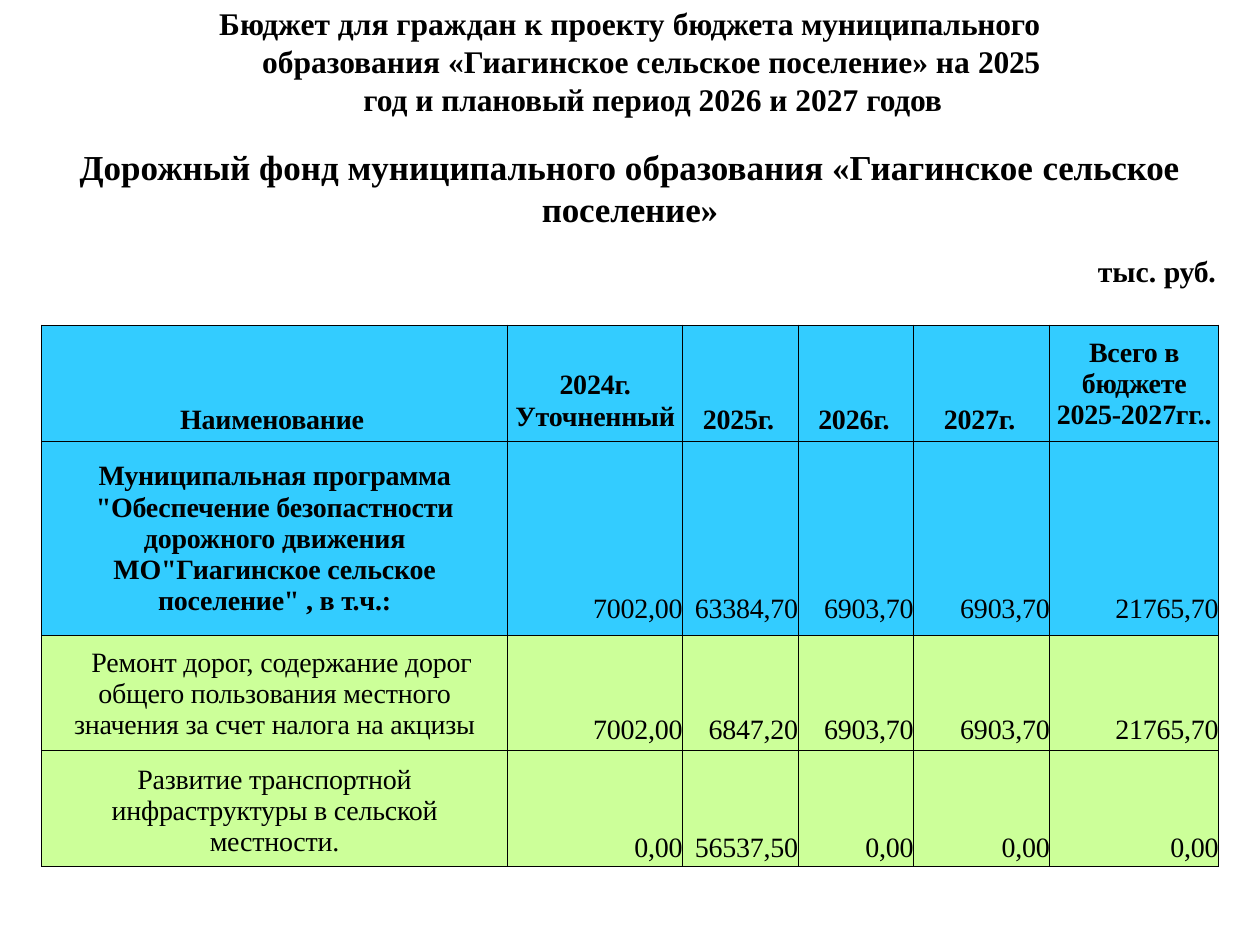
import pptx
import pptx.util
import pptx.dml.color
import pptx.enum.text
import pptx.oxml
import pptx.oxml.ns

Pt = pptx.util.Pt
Align = pptx.enum.text.PP_ALIGN
Anchor = pptx.enum.text.MSO_ANCHOR
theme = {
    "font": "Times New Roman",
    "ink": "000000",
    "blue": "33CCFF",
    "green": "CCFF99",
    "title": 18,
    "heading": 20,
    "unit": 17,
    "cell": 16,
}


def write(para, spans, size, bold, left=0, indent=0, **layout):
    props = para._p.get_or_add_pPr()
    props.set("marL", str(Pt(left)))
    props.set("indent", str(Pt(indent)))
    for name, value in layout.items():
        setattr(para, name, value)
    for text, spacing in spans:
        span = para.add_run()
        span.text = text
        for name, value in {"name": theme["font"], "size": Pt(size), "bold": bold}.items():
            setattr(span.font, name, value)
        span.font.color.rgb = pptx.dml.color.RGBColor.from_string(theme["ink"])
        span._r.get_or_add_rPr().set("spc", str(spacing))


def outline(cell):
    props = cell._tc.get_or_add_tcPr()
    for place, side in enumerate(("lnL", "lnR", "lnT", "lnB")):
        props.insert(place, pptx.oxml.parse_xml(
            f'<a:{side} {pptx.oxml.ns.nsdecls("a")} w="6350"><a:solidFill>'
            f'<a:srgbClr val="{theme["ink"]}"/></a:solidFill></a:{side}>'))


deck = pptx.Presentation()
deck.slide_width, deck.slide_height = Pt(720), Pt(540)
page = deck.slides.add_slide(deck.slide_layouts[5])

title = page.shapes.title
for name, value in {"left": 123.84, "top": 1.44, "width": 473.04, "height": 45.36}.items():
    setattr(title, name, Pt(value))
box = page.shapes.add_textbox(Pt(44.64), Pt(44.64), Pt(650.16), Pt(120.96))
frame_format = {
    "margin_left": 0, "margin_top": Pt(1), "margin_right": 0, "margin_bottom": 0,
    "word_wrap": True, "vertical_anchor": Anchor.TOP,
    "auto_size": pptx.enum.text.MSO_AUTO_SIZE.NONE,
}
for shape in (title, box):
    for name, value in frame_format.items():
        setattr(shape.text_frame, name, value)

write(title.text_frame.paragraphs[0],
      [("Бюджет для граждан к проекту ", 0), ("бюджета муниципального ", -10),
       ("образования «Гиагинское сельское поселение» на ", 0), ("2025", -20)],
      theme["title"], True, 25.9, -24.5, alignment=Align.LEFT, line_spacing=Pt(21.7))

frame = box.text_frame
write(frame.paragraphs[0],
      [("год и ", 0), ("плановый ", -10), ("период 2026 и 2027 ", 0), ("годов", -10)],
      theme["title"], True, 6.5, alignment=Align.CENTER, line_spacing=Pt(21.7))
write(frame.add_paragraph(),
      [("Дорожный фонд муниципального образования «Гиагинское ", 0),
       ("сельское поселение»", -10)],
      theme["heading"], True, 265, -264.2, alignment=Align.LEFT,
      line_spacing=Pt(24), space_before=Pt(15.6))
write(frame.add_paragraph(), [("тыс. ", 0), ("руб.", -20)], theme["unit"], True,
      alignment=Align.RIGHT, line_spacing=Pt(20.5), space_before=Pt(13.4))

columns = [266.4, 100, 66, 66, 77.8, 96.5]
rows = [66.2, 110.9, 66.2, 66.2]
header = ["Наименование", "2024г.\nУточненный", "2025г.", "2026г.", "2027г.",
          "Всего в бюджете 2025-2027гг.."]
header_insets = [79.2, 0, 11.5, 11.5, 17.3, 2]
names = [
    ('Муниципальная программа "Обеспечение безопастности дорожного движения '
     'МО"Гиагинское сельское поселение" , в т.ч.:', 28, 11.5, 0),
    ("Ремонт дорог, содержание дорог общего пользования местного "
     "значения за счет налога на акцизы", 15, 7, 8),
    ("Развитие транспортной\nинфраструктуры в сельской местности.", 37, 7.8, 0),
]
values = [
    ["7002,00", "63384,70", "6903,70", "6903,70", "21765,70"],
    ["7002,00", "6847,20", "6903,70", "6903,70", "21765,70"],
    ["0,00", "56537,50", "0,00", "0,00", "0,00"],
]
fills = [theme["blue"], theme["blue"], theme["green"], theme["green"]]
bottoms = [3, 5.7, 3, 2]

table = page.shapes.add_table(len(rows), len(columns), Pt(23.76), Pt(185.76),
                              Pt(sum(columns)), Pt(sum(rows))).table
for column, width in zip(table.columns, columns):
    column.width = Pt(width)
for row, height in zip(table.rows, rows):
    row.height = Pt(height)

for r in range(len(rows)):
    for c in range(len(columns)):
        cell = table.cell(r, c)
        left = right = top = indent = 0
        bottom, anchor, align = bottoms[r], Anchor.BOTTOM, Align.RIGHT
        if r == 0:
            text, left = header[c], header_insets[c]
            align = Align.CENTER if c in (1, 5) else Align.LEFT
            if c == 1:
                bottom = 5
            if c == 5:
                top, bottom, right, anchor = 7.2, 0, left, Anchor.TOP
        elif c == 0:
            text, left, top, indent = names[r - 1]
            right, bottom, anchor, align = left, 0, Anchor.TOP, Align.CENTER
        else:
            text = values[r - 1][c - 1]
        cell_format = {"margin_left": Pt(left), "margin_right": Pt(right),
                       "margin_top": Pt(top), "margin_bottom": Pt(bottom),
                       "vertical_anchor": anchor}
        for name, value in cell_format.items():
            setattr(cell, name, value)
        cell.fill.solid()
        cell.fill.fore_color.rgb = pptx.dml.color.RGBColor.from_string(fills[r])
        outline(cell)
        for number, line in enumerate(text.split("\n")):
            para = cell.text_frame.add_paragraph() if number else cell.text_frame.paragraphs[0]
            write(para, [(line, -10)], theme["cell"], r == 0 or (r == 1 and c == 0),
                  indent=indent, alignment=align)

deck.save("out.pptx")
